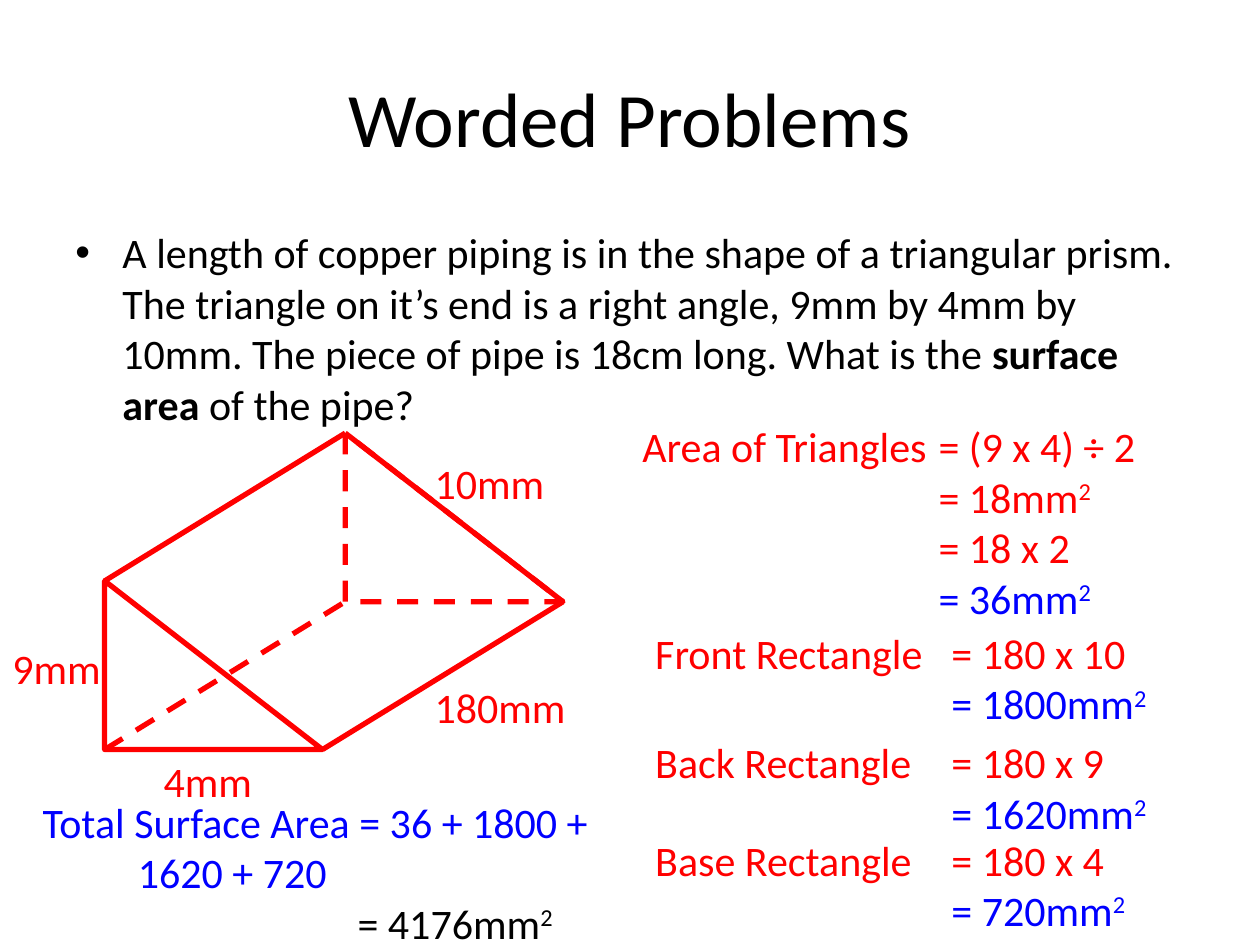
import pptx
import pptx.dml.color
import pptx.enum.dml
import pptx.enum.shapes
import pptx.enum.text
import pptx.oxml.ns
import pptx.util
from lxml import etree
from pptx.util import Cm

COLOURS = {"text": "000000", "working": "FF0000", "answer": "0000FF"}


def colour(name):
    return pptx.dml.color.RGBColor.from_string(COLOURS[name])


def child(parent, tag, **attributes):
    return etree.SubElement(parent, pptx.oxml.ns.qn(tag), attributes)


class Lesson:
    font = "Calibri"
    size = 24
    line_width = 3

    def __init__(self, slide):
        self.slide = slide

    def text_box(self, left, top, width, height, grow=True):
        frame = self.slide.shapes.add_textbox(
            Cm(left), Cm(top), Cm(width), Cm(height)).text_frame
        frame.word_wrap = True
        if grow:
            frame.auto_size = pptx.enum.text.MSO_AUTO_SIZE.SHAPE_TO_FIT_TEXT
        return frame

    def run(self, paragraph, wording, ink, size=None, bold=False, raised=False):
        run = paragraph.add_run()
        run.text = wording
        run.font.name = self.font
        run.font.size = pptx.util.Pt(size or self.size)
        run.font.bold = bold
        run.font.color.rgb = colour(ink)
        if raised:
            run.font._element.set("baseline", "30000")

    def hang(self, paragraph, indent, bullet=None):
        properties = paragraph._p.get_or_add_pPr()
        properties.set("marL", str(Cm(indent)))
        properties.set("indent", str(-Cm(indent)))
        if bullet:
            child(properties, "a:buFont", typeface="Arial")
            child(properties, "a:buChar", char=bullet)

    def tab_stop(self, paragraph, position):
        stops = child(paragraph._p.get_or_add_pPr(), "a:tabLst")
        child(stops, "a:tab", pos=str(Cm(position)), algn="l")

    def label(self, wording, left, top, width):
        frame = self.text_box(left, top, width, 1.27)
        self.run(frame.paragraphs[0], wording, "working")

    def result(self, paragraph, wording, ink):
        """An area in square millimetres, lined up at the tab stop."""
        self.run(paragraph, "\t", ink)
        self.run(paragraph, wording + "mm", ink)
        self.run(paragraph, "2", ink, raised=True)

    def working(self, left, top, height, heading, steps):
        """A heading with its sum, then the steps below the equals sign."""
        frame = self.text_box(left, top, 11.81, height)
        for number, (wording, ink, is_area) in enumerate(
                [(heading, "working", False)] + steps):
            paragraph = frame.add_paragraph() if number else frame.paragraphs[0]
            self.tab_stop(paragraph, 5.97)
            if is_area:
                self.result(paragraph, wording, ink)
            else:
                self.run(paragraph, wording, ink)

    def style_line(self, line, dashed):
        line.color.rgb = colour("working")
        line.width = pptx.util.Pt(self.line_width)
        if dashed:
            line.dash_style = pptx.enum.dml.MSO_LINE.DASH

    def triangle(self, left, top, width, height, dashed=False):
        shape = self.slide.shapes.add_shape(
            pptx.enum.shapes.MSO_SHAPE.RIGHT_TRIANGLE,
            Cm(left), Cm(top), Cm(width), Cm(height))
        shape.shadow.inherit = False
        shape.fill.background()
        self.style_line(shape.line, dashed)

    def edge(self, start, end, dashed=False):
        connector = self.slide.shapes.add_connector(
            pptx.enum.shapes.MSO_CONNECTOR.STRAIGHT,
            *(Cm(length) for length in (*start, *end)))
        self.style_line(connector.line, dashed)
        child(connector._element.spPr, "a:effectLst")


def main():
    deck = pptx.Presentation()
    deck.slide_width, deck.slide_height = Cm(25.4), Cm(19.05)
    lesson = Lesson(deck.slides.add_slide(deck.slide_layouts[6]))

    # Title
    heading = lesson.text_box(1.27, 0.76, 22.86, 3.18, grow=False)
    heading.vertical_anchor = pptx.enum.text.MSO_ANCHOR.MIDDLE
    heading.paragraphs[0].alignment = pptx.enum.text.PP_ALIGN.CENTER
    lesson.run(heading.paragraphs[0], "Worded Problems", "text", size=44)

    # Problem
    problem = lesson.text_box(1.27, 4.45, 22.86, 12.57, grow=False).paragraphs[0]
    problem.space_before = pptx.util.Pt(4.8)
    lesson.hang(problem, 0.95, bullet="•")
    lesson.run(problem, "A length of copper piping is in the shape of a triangular "
               "prism. The triangle on it’s end is a right angle, 9mm by 4mm by "
               "10mm. The piece of pipe is 18cm long. What is the ", "text")
    lesson.run(problem, "surface area", "text", bold=True)
    lesson.run(problem, " of the pipe?", "text")

    # Prism: the far triangle is the near one moved by the depth
    left, top, width, height = 2.11, 11.71, 4.39, 3.4
    depth_x, depth_y = 4.85, -2.98
    apex, corner, toe = ((left, top), (left, top + height),
                         (left + width, top + height))
    far_apex, far_corner, far_toe = ((x + depth_x, y + depth_y)
                                     for x, y in (apex, corner, toe))
    lesson.triangle(*apex, width, height)
    lesson.triangle(*far_apex, width, height, dashed=True)
    lesson.edge(apex, far_apex)
    lesson.edge(toe, far_toe)
    lesson.edge(corner, far_corner, dashed=True)
    lesson.edge(far_apex, far_toe)

    # Dimensions
    for wording, x, y, label_width in (("9mm", 0, 12.83, 2.5),
                                       ("4mm", 3.05, 15.11, 2.5),
                                       ("180mm", 8.51, 13.61, 3.4),
                                       ("10mm", 8.51, 9.09, 2.84)):
        lesson.label(wording, x, y, label_width)

    # Area of each face
    lesson.working(12.7, 8.36, 4.37, "Area of Triangles\t= (9 x 4) ÷ 2",
                   [("= 18", "working", True),
                    ("\t= 18 x 2", "working", False),
                    ("= 36", "answer", True)])
    for face, side, area, y in (("Front", 10, 1800, 12.52),
                                ("Back", 9, 1620, 14.73),
                                ("Base", 4, 720, 16.69)):
        lesson.working(12.96, y, 2.31, f"{face} Rectangle\t= 180 x {side}",
                       [(f"= {area}", "answer", True)])

    # Total
    total = lesson.text_box(0.61, 15.93, 11.81, 3.33)
    lesson.hang(total.paragraphs[0], 1.92)
    lesson.run(total.paragraphs[0],
               "Total Surface Area = 36 + 1800 + 1620 + 720", "answer")
    answer = total.add_paragraph()
    lesson.tab_stop(answer, 6.35)
    lesson.result(answer, "= 4176", "text")

    deck.save("out.pptx")


if __name__ == "__main__":
    main()
